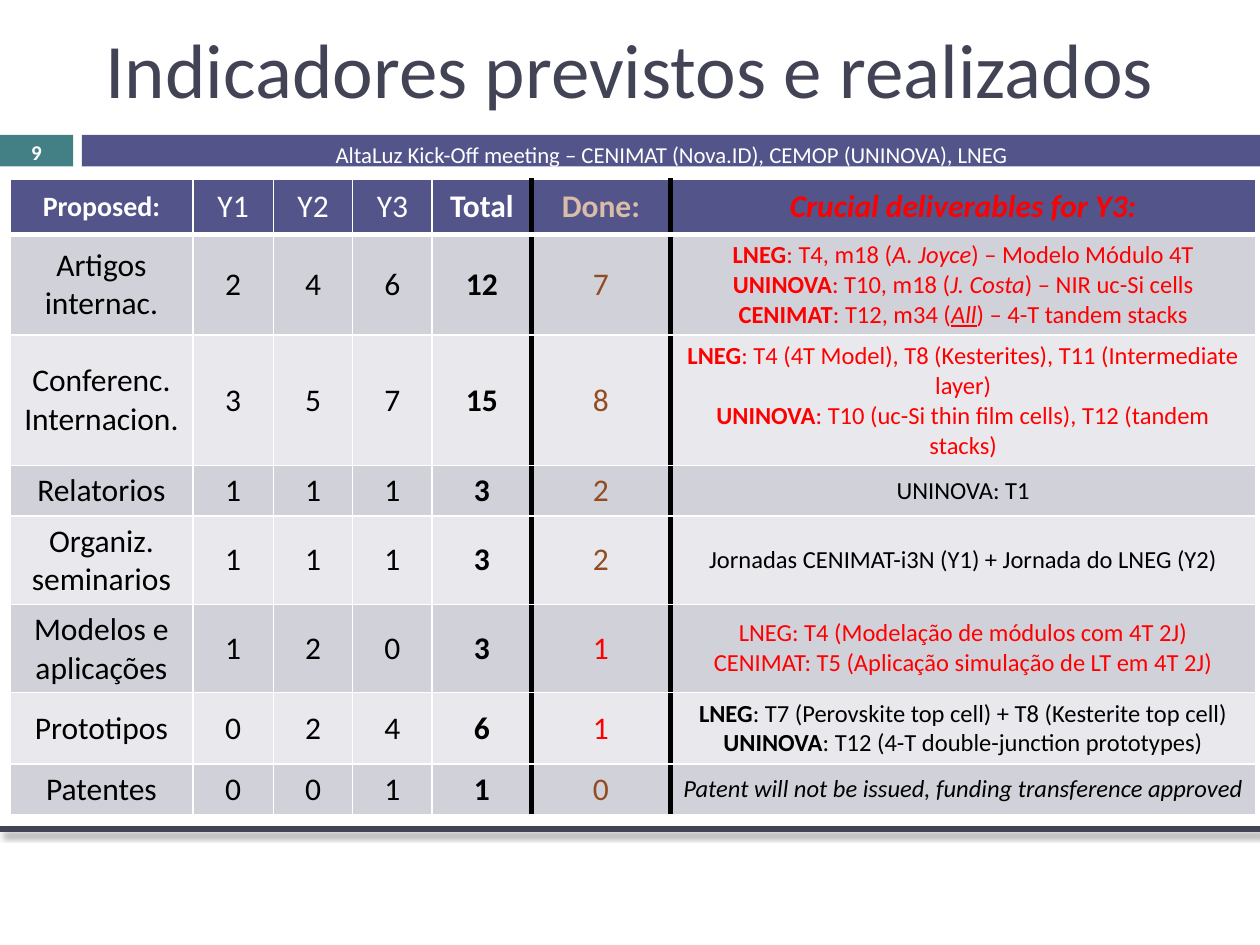
from lxml import etree
from pptx import Presentation
from pptx.dml.color import RGBColor
from pptx.enum.shapes import MSO_CONNECTOR, MSO_SHAPE
from pptx.enum.text import MSO_ANCHOR, PP_ALIGN
from pptx.oxml.ns import qn
from pptx.util import Inches, Pt

RECTANGLE = MSO_SHAPE.RECTANGLE
STRAIGHT = MSO_CONNECTOR.STRAIGHT
CENTER = PP_ALIGN.CENTER
MIDDLE = MSO_ANCHOR.MIDDLE

FONT = "Calibri"
WHITE = RGBColor(0xFF, 0xFF, 0xFF)
BLACK = RGBColor(0, 0, 0)
RED = RGBColor(0xFF, 0, 0)
SLATE = RGBColor(0x42, 0x44, 0x56)
TEAL = RGBColor(0x43, 0x80, 0x86)
PURPLE = RGBColor(0x53, 0x54, 0x8A)
TAN = RGBColor(0xD9, 0xBD, 0xA9)
BROWN = RGBColor(0x93, 0x4C, 0x22)
BANDS = [RGBColor(0xD1, 0xD1, 0xDA), RGBColor(0xE9, 0xE9, 0xED)]

COLUMN_WIDTHS = [1.45, 0.64, 0.63, 0.63, 0.79, 1.1, 4.65]
ROW_HEIGHTS = [0.44, 0.77, 0.99, 0.38, 0.61, 0.66, 0.54, 0.38]
TOTAL, DONE, DELIVERABLES = 4, 5, 6

HEADERS = [
    ("Proposed:", 16, WHITE, "b"),
    ("Y1", 18, WHITE, ""),
    ("Y2", 18, WHITE, ""),
    ("Y3", 18, WHITE, ""),
    ("Total", 18, WHITE, "b"),
    ("Done:", 18, TAN, "b"),
    ("Crucial deliverables for Y3:", 18, RED, "bi"),
]

INDICATORS = [
    ("Artigos internac.", [2, 4, 6, 12, 7], BROWN, RED, [
        [("LNEG", "b"), (": T4, m18 (", ""), ("A. Joyce", "i"), (") – Modelo Módulo 4T", "")],
        [("UNINOVA", "b"), (": T10, m18 (", ""), ("J. Costa", "i"), (") – NIR uc-Si cells", "")],
        [("CENIMAT", "b"), (": T12, m34 (", ""), ("All", "iu"), (") – 4-T tandem stacks", "")],
    ]),
    ("Conferenc. Internacion.", [3, 5, 7, 15, 8], BROWN, RED, [
        [("LNEG", "b"), (": T4 (4T Model), T8 (Kesterites), T11 (Intermediate layer)", "")],
        [("UNINOVA", "b"), (": T10 (uc-Si thin film cells), T12 (tandem stacks)", "")],
    ]),
    ("Relatorios", [1, 1, 1, 3, 2], BROWN, BLACK, [[("UNINOVA: T1", "")]]),
    ("Organiz. seminarios", [1, 1, 1, 3, 2], BROWN, BLACK, [
        [("Jornadas CENIMAT-i3N (Y1) + Jornada do LNEG (Y2)", "")],
    ]),
    ("Modelos e aplicações", [1, 2, 0, 3, 1], RED, RED, [
        [("LNEG: T4 (Modelação de módulos com 4T 2J)", "")],
        [("CENIMAT: T5 (Aplicação simulação de LT em 4T 2J)", "")],
    ]),
    ("Prototipos", [0, 2, 4, 6, 1], RED, BLACK, [
        [("LNEG", "b"), (": T7 (Perovskite top cell) + T8 (Kesterite top cell)", "")],
        [("UNINOVA", "b"), (": T12 (4-T double-junction prototypes)", "")],
    ]),
    ("Patentes", [0, 0, 1, 1, 0], BROWN, BLACK, [
        [("Patent will not be issued, funding transference approved", "i")],
    ]),
]


def format_span(span, size, color, style=""):
    font = span.font
    font.name = FONT
    font.size = Pt(size)
    font.color.rgb = color
    font.bold = "b" in style
    font.italic = "i" in style
    font.underline = "u" in style


def add_bar(page, left, width, color):
    bar = page.shapes.add_shape(RECTANGLE, Inches(left), Inches(1.07), Inches(width), Inches(0.25))
    bar.shadow.inherit = False
    bar.fill.solid()
    bar.fill.fore_color.rgb = color
    bar.line.fill.background()


def add_label(page, left, top, width, height, text, size, color, style="", spacing=1):
    box = page.shapes.add_textbox(Inches(left), Inches(top), Inches(width), Inches(height))
    frame = box.text_frame
    frame.word_wrap = True
    frame.vertical_anchor = MIDDLE
    frame.text = text
    para = frame.paragraphs[0]
    para.alignment = CENTER
    para.line_spacing = spacing
    format_span(para.runs[0], size, color, style)


def add_shadowed_line(page, y):
    line = page.shapes.add_connector(STRAIGHT, Inches(10), Inches(y), Inches(0), Inches(y))
    line.line.color.rgb = SLATE
    line.line.width = Pt(3)
    effects = etree.SubElement(line._element.spPr, qn("a:effectLst"))
    shadow = etree.SubElement(effects, qn("a:outerShdw"), blurRad=str(Pt(4)), dist=str(Pt(3)),
                              dir=str(45 * 60000), algn="ctr", rotWithShape="0")
    color = etree.SubElement(shadow, qn("a:srgbClr"), val=str(BLACK))
    etree.SubElement(color, qn("a:alpha"), val="40000")


def add_border(cell, side, color, width):
    border = etree.SubElement(cell._tc.get_or_add_tcPr(), qn(f"a:ln{side}"), w=str(Pt(width)))
    fill = etree.SubElement(border, qn("a:solidFill"))
    etree.SubElement(fill, qn("a:srgbClr"), val=str(color))


def style_cell(cell, row, column):
    thin, divider = (WHITE, 1), (BLACK, 3)
    heavy = (WHITE, 3)
    borders = {
        "L": divider if column in (DONE, DELIVERABLES) else thin,
        "R": divider if column in (TOTAL, DONE) else thin,
        "T": heavy if row == 1 else thin,
        "B": heavy if row == 0 else thin,
    }
    for side, (color, width) in borders.items():
        add_border(cell, side, color, width)
    cell.fill.solid()
    cell.fill.fore_color.rgb = BANDS[(row - 1) % 2] if row else PURPLE
    cell.vertical_anchor = MIDDLE


def fill_cell(cell, lines, size, color):
    frame = cell.text_frame
    frame.text = "\n".join("" for _ in lines)
    for para, pieces in zip(frame.paragraphs, lines):
        para.alignment = CENTER
        for text, style in pieces:
            span = para.add_run()
            span.text = text
            format_span(span, size, color, style)


def add_indicator_table(page):
    frame = page.shapes.add_table(len(ROW_HEIGHTS), len(COLUMN_WIDTHS), Inches(0.08), Inches(1.42),
                                  Inches(sum(COLUMN_WIDTHS)), Inches(sum(ROW_HEIGHTS)))
    table = frame.table
    table.horz_banding = False
    for column, width in zip(table.columns, COLUMN_WIDTHS):
        column.width = Inches(width)
    for row, height in zip(table.rows, ROW_HEIGHTS):
        row.height = Inches(height)
    for row in range(len(ROW_HEIGHTS)):
        for column in range(len(COLUMN_WIDTHS)):
            style_cell(table.cell(row, column), row, column)

    for column, (text, size, color, style) in enumerate(HEADERS):
        fill_cell(table.cell(0, column), [[(text, style)]], size, color)
    for row, (name, counts, done_color, note_color, notes) in enumerate(INDICATORS, 1):
        fill_cell(table.cell(row, 0), [[(name, "")]], 18, BLACK)
        for column, count in enumerate(counts, 1):
            style = "b" if column == TOTAL else ""
            color = done_color if column == DONE else BLACK
            fill_cell(table.cell(row, column), [[(str(count), style)]], 18, color)
        fill_cell(table.cell(row, DELIVERABLES), notes, 14, note_color)


def main():
    deck = Presentation()
    deck.slide_width, deck.slide_height = Inches(10), Inches(7.5)
    page = deck.slides.add_slide(deck.slide_layouts[6])
    add_bar(page, 0, 0.58, TEAL)
    add_bar(page, 0.65, 9.35, PURPLE)
    add_label(page, 0.65, 0.96, 9.35, 0.43,
              "AltaLuz Kick-Off meeting – CENIMAT (Nova.ID), CEMOP (UNINOVA), LNEG",
              13, WHITE, spacing=1.5)
    add_shadowed_line(page, 6.58)
    add_label(page, 0, 0.07, 10, 0.93, "Indicadores previstos e realizados", 44, SLATE)
    add_label(page, 0, 1.07, 0.58, 0.27, "9", 12, WHITE, "b")
    add_indicator_table(page)
    deck.save("out.pptx")


if __name__ == "__main__":
    main()
